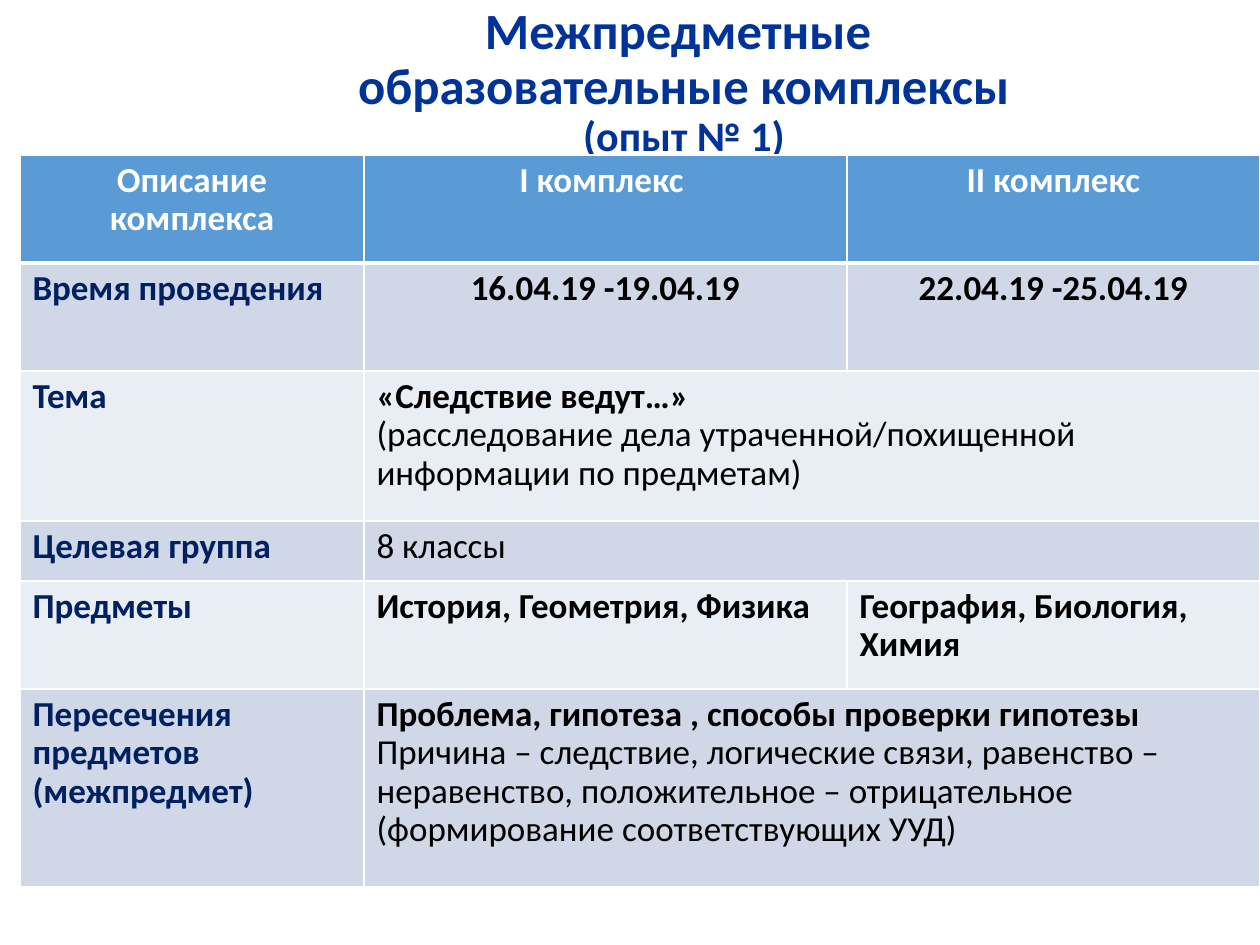
from lxml import etree
from pptx import Presentation
from pptx.dml.color import RGBColor
from pptx.enum.text import MSO_ANCHOR, MSO_AUTO_SIZE, PP_ALIGN
from pptx.oxml.ns import qn
from pptx.util import Emu, Pt

CENTER, LEFT = PP_ALIGN.CENTER, PP_ALIGN.LEFT
FONT = "Calibri"
COLORS = {
    "title": "003399", "header": "5B9BD5", "header_text": "FFFFFF",
    "label": "002060", "text": "000000", "border": "FFFFFF",
    "dark_band": "D0D8E8", "light_band": "E9EDF4",
}

TITLE_LINES = [
    ("Межпредметные ", 29),
    ("образовательные комплексы", 29),
    ("(опыт № 1)", 24),
]
# Each cell is a list of (paragraph, bold); a row of two cells spans its last one.
ROWS = [
    [[("Описание комплекса", True)], [("I комплекс ", True)], [(" II комплекс ", True)]],
    [[("Время проведения", True)], [("16.04.19 -19.04.19", True)],
     [("22.04.19 -25.04.19", True)]],
    [[("Тема", True)],
     [("«Следствие ведут…»", True),
      ("(расследование дела утраченной/похищенной информации по предметам)", False)]],
    [[("Целевая группа", True)], [("8 классы", False)]],
    [[("Предметы", True)], [("История, Геометрия, Физика", True)],
     [("География, Биология, Химия", True)]],
    [[("Пересечения предметов (межпредмет)", True)],
     [("Проблема, гипотеза , способы проверки гипотезы", True),
      ("Причина – следствие, логические связи, равенство – неравенство, "
       "положительное – отрицательное", False),
      ("(формирование соответствующих УУД)", False)]],
]
COLUMN_WIDTHS = [344, 483, 413]
ROW_HEIGHTS = [108, 108, 150, 60, 108, 198]


def px(length):
    return Emu(round(length * 914400 / 126))


def add_run(paragraph, text, size, color, bold=True):
    run = paragraph.add_run()
    run.text = text
    for name, value in {"name": FONT, "size": Pt(size), "bold": bold}.items():
        setattr(run.font, name, value)
    run.font.color.rgb = RGBColor.from_string(COLORS[color])


def set_borders(cell, row):
    """Thin lines all round, with a thick one under the header row."""
    widths = {"lnL": 1, "lnR": 1, "lnT": 3 if row == 1 else 1, "lnB": 3 if row == 0 else 1}
    properties = cell._tc.get_or_add_tcPr()
    for side, width in widths.items():
        line = etree.SubElement(properties, qn(f"a:{side}"), w=str(Pt(width)))
        fill = etree.SubElement(line, qn("a:solidFill"))
        etree.SubElement(fill, qn("a:srgbClr"), val=COLORS["border"])


def style_cell(cell, row):
    set_borders(cell, row)
    band = "header" if row == 0 else "dark_band" if row % 2 else "light_band"
    cell.fill.solid()
    cell.fill.fore_color.rgb = RGBColor.from_string(COLORS[band])


def fill_cell(cell, paragraphs, row, column):
    color = "header_text" if row == 0 else "label" if column == 0 else "text"
    centered = row == 0 or (row == 1 and column > 0)
    for index, (text, bold) in enumerate(paragraphs):
        frame = cell.text_frame
        paragraph = frame.add_paragraph() if index else frame.paragraphs[0]
        paragraph.alignment = CENTER if centered else LEFT
        paragraph.line_spacing = 0.9
        add_run(paragraph, text, 20, color, bold)


def add_title(slide):
    title = slide.shapes.title
    title.left, title.top, title.width, title.height = map(px, (108, 18, 1152, 130))
    frame = title.text_frame
    frame.auto_size = MSO_AUTO_SIZE.NONE
    frame.vertical_anchor = MSO_ANCHOR.MIDDLE
    heading = frame.paragraphs[0]
    heading.alignment = CENTER
    heading.line_spacing = 0.9
    for index, (text, size) in enumerate(TITLE_LINES):
        if index:
            heading.add_line_break()
        add_run(heading, text, size, "title")


def add_complex_table(slide):
    table = slide.shapes.add_table(
        len(ROWS), len(COLUMN_WIDTHS), px(20), px(155),
        px(sum(COLUMN_WIDTHS)), px(sum(ROW_HEIGHTS))).table
    for column, width in zip(table.columns, COLUMN_WIDTHS):
        column.width = px(width)
    for row, (cells, height) in enumerate(zip(ROWS, ROW_HEIGHTS)):
        table.rows[row].height = px(height)
        for column in range(len(COLUMN_WIDTHS)):
            style_cell(table.cell(row, column), row)
        if len(cells) < len(COLUMN_WIDTHS):
            table.cell(row, len(cells) - 1).merge(table.cell(row, len(COLUMN_WIDTHS) - 1))
        for column, paragraphs in enumerate(cells):
            fill_cell(table.cell(row, column), paragraphs, row, column)


def main():
    presentation = Presentation()
    presentation.slide_width, presentation.slide_height = px(1260), px(945)
    slide = presentation.slides.add_slide(presentation.slide_layouts[5])
    add_title(slide)
    add_complex_table(slide)
    presentation.save("out.pptx")


if __name__ == "__main__":
    main()
